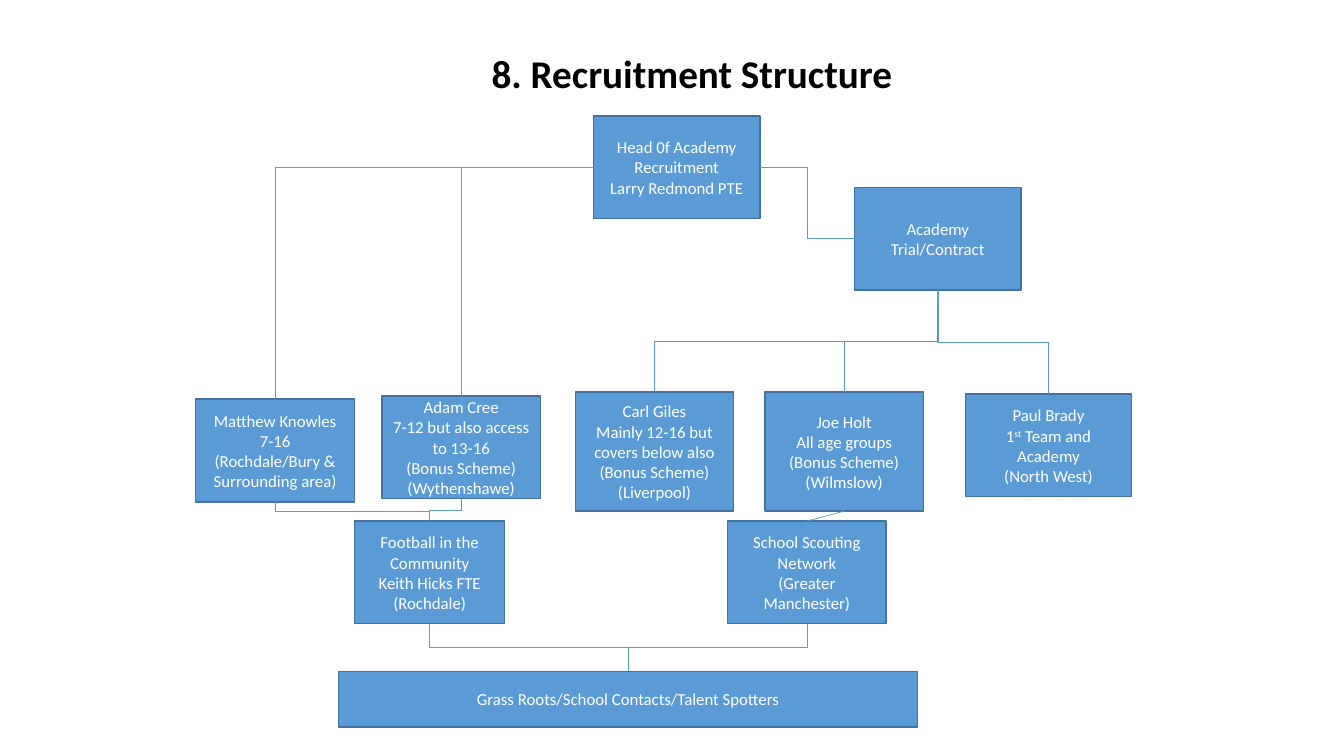
import pptx
import pptx.dml.color
import pptx.enum.shapes
import pptx.enum.text
import pptx.oxml.ns
import pptx.util
from lxml import etree

Cm = pptx.util.Cm
Pt = pptx.util.Pt
qn = pptx.oxml.ns.qn
RGBColor = pptx.dml.color.RGBColor
Kind = pptx.enum.shapes.MSO_CONNECTOR

BLUE = RGBColor(0x5B, 0x9B, 0xD5)
EDGE = RGBColor(0x43, 0x73, 0x9E)
WHITE = RGBColor(0xFF, 0xFF, 0xFF)
BLACK = RGBColor(0, 0, 0)
FONT = "Calibri"
TOP, LEFT, BOTTOM, RIGHT = range(4)
BOX_HEIGHT = 2.59


def set_font(font, size, color, bold=False):
    font.name, font.size, font.bold = FONT, Pt(size), bold
    font.color.rgb = color


def add_box(page, left, top, width, height, lines):
    """Add a filled box; text between ^ marks is superscript."""
    box = page.shapes.add_shape(pptx.enum.shapes.MSO_SHAPE.RECTANGLE,
                                Cm(left), Cm(top), Cm(width), Cm(height))
    box.shadow.inherit = False
    box.fill.solid()
    box.fill.fore_color.rgb = BLUE
    box.line.color.rgb = EDGE
    box.line.width = Pt(1)
    frame = box.text_frame
    frame.word_wrap = True
    frame.vertical_anchor = pptx.enum.text.MSO_ANCHOR.MIDDLE
    frame.text = "\n".join(line.split("^")[0] for line in lines)
    for para, line in zip(frame.paragraphs, lines):
        para.alignment = pptx.enum.text.PP_ALIGN.CENTER
        for part in line.split("^")[1:]:
            para.add_run().text = part
        for index, span in enumerate(para.runs):
            set_font(span.font, 12, WHITE)
            if index % 2:
                span._r.get_or_add_rPr().set("baseline", "30000")
    return box


def side(box, index):
    """Return the middle of a side of the box."""
    x = {LEFT: box.left, RIGHT: box.left + box.width}.get(index, box.left + box.width // 2)
    y = {TOP: box.top, BOTTOM: box.top + box.height}.get(index, box.top + box.height // 2)
    return x, y


def add_link(page, kind, start, end):
    link = page.shapes.add_connector(kind, *start, *end)
    link.line.color.rgb = BLUE
    link.line.width = Pt(0.5)
    etree.SubElement(link._element.spPr, qn("a:effectLst"))
    return link


def add_corner(page, start, end):
    """Link across, then down, with a single bend."""
    link = add_link(page, Kind.ELBOW, start, end)
    link._element.spPr.find(qn("a:prstGeom")).set("prst", "bentConnector2")


def add_drop(page, upper, lower):
    """Link down, across and down: an elbow turned by a quarter."""
    (x1, y1), (x2, y2) = side(upper, BOTTOM), side(lower, TOP)
    length, breadth = y2 - y1, abs(x2 - x1)
    left, top = (x1 + x2 - length) // 2, (y1 + y2 - breadth) // 2
    link = add_link(page, Kind.ELBOW, (left, top), (left + length, top + breadth))
    xfrm = link._element.spPr.find(qn("a:xfrm"))
    if x2 > x1:
        xfrm.set("rot", str(270 * 60000))
        xfrm.set("flipH", "1")
    else:
        xfrm.set("rot", str(90 * 60000))


def add_title(page, left, top, width, height):
    box = page.shapes.add_textbox(Cm(left), Cm(top), Cm(width), Cm(height))
    frame = box.text_frame
    frame.word_wrap = True
    frame.margin_left = Cm(7.87)
    frame.text = "8. Recruitment Structure"
    set_font(frame.paragraphs[0].runs[0].font, 28, BLACK, True)


def add_leadership(page, left, top):
    head = add_box(page, left, top, 4.19, BOX_HEIGHT,
                   ["Head 0f Academy Recruitment", "Larry Redmond PTE"])
    trial = add_box(page, left + 6.58, top + 1.8, 4.19, BOX_HEIGHT,
                    ["Academy Trial/Contract"])
    add_link(page, Kind.ELBOW, side(head, RIGHT), side(trial, LEFT))
    return head, trial


def add_scouts(page, left, top):
    scouts = [
        (0, 0.18, 4.01, BOX_HEIGHT,
         ["Matthew Knowles", "7-16", "(Rochdale/Bury & Surrounding area)"]),
        (4.7, 0.1, 3.99, BOX_HEIGHT,
         ["Adam Cree", "7-12 but also access to 13-16", "(Bonus Scheme)", "(Wythenshawe)"]),
        (9.57, 0, 3.99, 3,
         ["Carl Giles", "Mainly 12-16 but covers below also", "(Bonus Scheme)", "(Liverpool)"]),
        (14.35, 0, 3.99, 3,
         ["Joe Holt", "All age groups", "(Bonus Scheme)", "(Wilmslow)"]),
        (19.4, 0.05, 4.19, BOX_HEIGHT,
         ["Paul Brady", "1^st^ Team and Academy", "(North West)"]),
    ]
    return [add_box(page, left + dx, top + dy, width, height, lines)
            for dx, dy, width, height, lines in scouts]


def add_grass_roots(page, left, top):
    community = add_box(page, left + 0.41, top, 3.78, BOX_HEIGHT,
                        ["Football in the Community", "Keith Hicks FTE", "(Rochdale)"])
    schools = add_box(page, left + 9.81, top, 3.99, BOX_HEIGHT,
                      ["School Scouting Network", "(Greater Manchester)"])
    contacts = add_box(page, left, top + 3.79, 14.6, 1.4,
                       ["Grass Roots/School Contacts/Talent Spotters"])
    for network in (community, schools):
        add_drop(page, network, contacts)
    return community, schools


def add_recruitment_slide(deck):
    page = deck.slides.add_slide(deck.slide_layouts[6])
    add_title(page, 4.52, 1.12, 24.79, 4.11)
    head, trial = add_leadership(page, 14.96, 2.92)
    matthew, adam, carl, joe, paul = add_scouts(page, 4.93, 9.88)
    community, schools = add_grass_roots(page, 8.53, 13.13)

    for scout in (matthew, adam):
        add_corner(page, side(head, LEFT), side(scout, TOP))
        add_drop(page, scout, community)
    for scout in (joe, paul):
        add_drop(page, trial, scout)
    branch_height = (side(trial, BOTTOM)[1] + carl.top) // 2
    add_corner(page, (side(joe, TOP)[0], branch_height), side(carl, TOP))
    link = add_link(page, Kind.STRAIGHT, side(joe, BOTTOM), side(schools, TOP))
    link.begin_connect(joe, BOTTOM)
    link.end_connect(schools, TOP)


def main():
    deck = pptx.Presentation()
    deck.slide_width, deck.slide_height = Cm(33.87), Cm(19.05)
    add_recruitment_slide(deck)
    deck.save("out.pptx")


if __name__ == "__main__":
    main()
